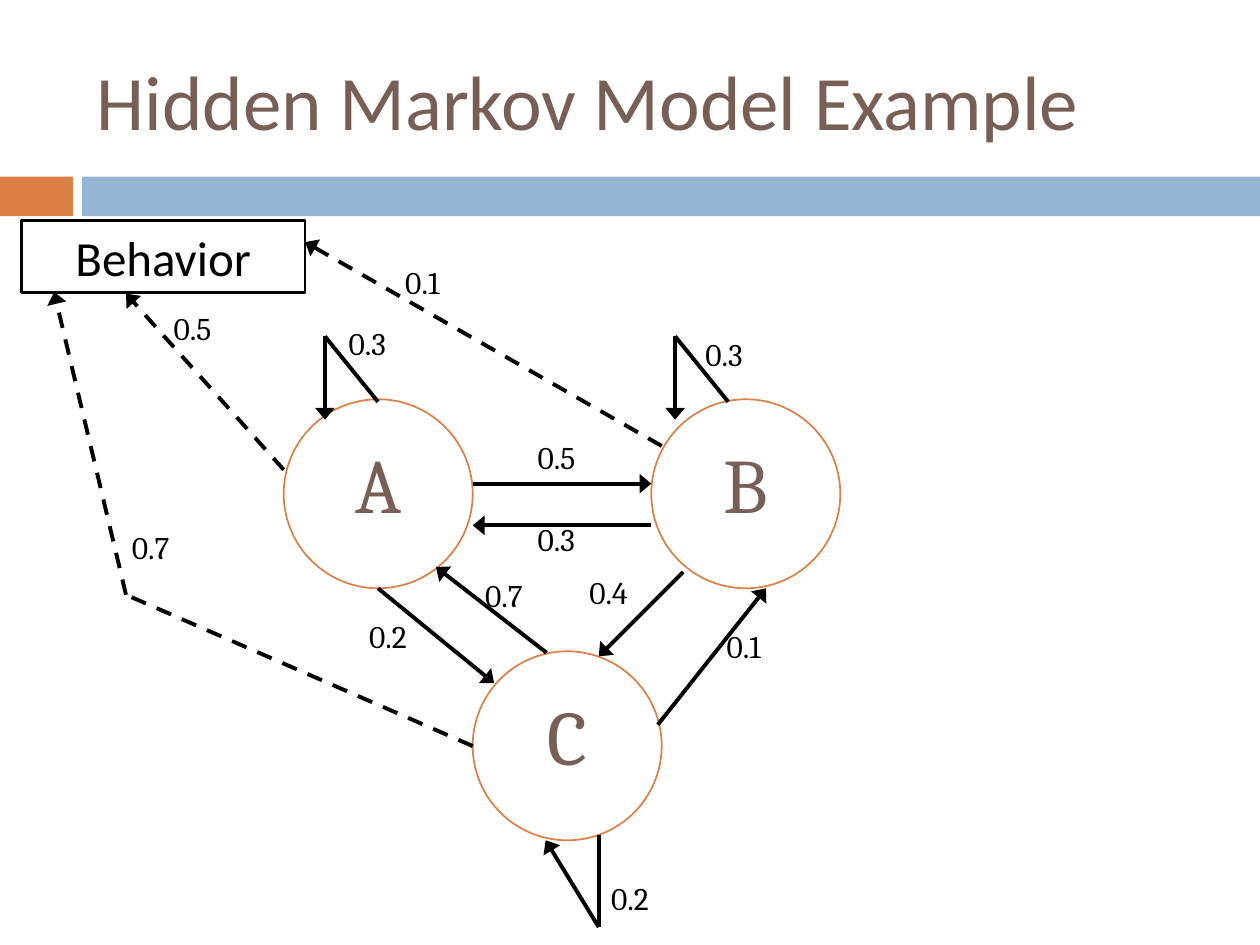
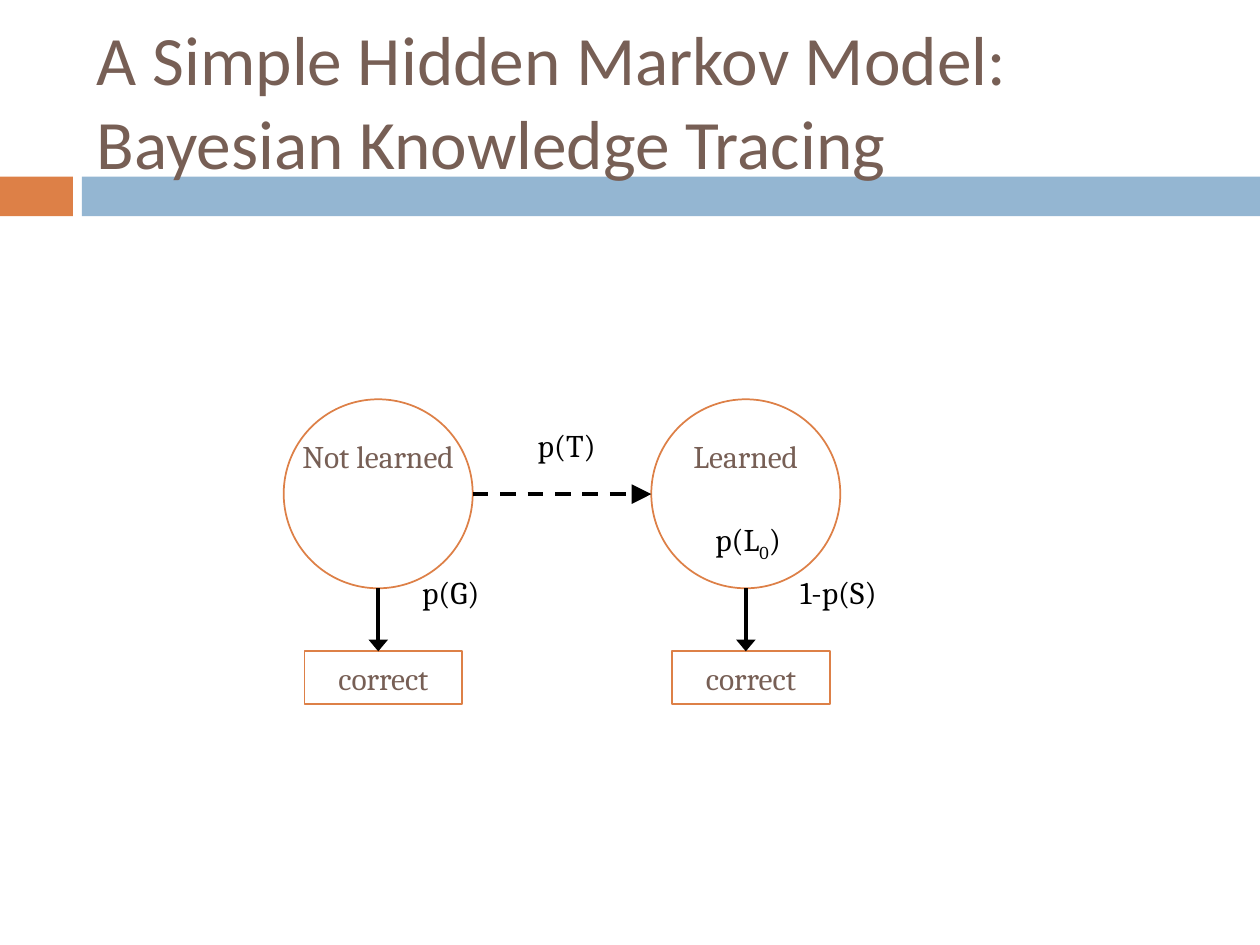
from copy import deepcopy
from dataclasses import dataclass
from itertools import pairwise

from pptx import Presentation
from pptx.dml.color import RGBColor
from pptx.enum.dml import MSO_LINE
from pptx.enum.shapes import MSO_CONNECTOR, MSO_SHAPE
from pptx.enum.text import MSO_ANCHOR, MSO_AUTO_SIZE, PP_ALIGN
from pptx.oxml.ns import qn
from pptx.oxml.xmlchemy import OxmlElement
from pptx.util import Cm, Pt

Point = tuple[float, float]


@dataclass(frozen=True)
class Theme:
    brown: str = "775F55"
    orange: str = "DD8047"
    blue: str = "94B6D2"
    black: str = "000000"
    white: str = "FFFFFF"
    heading: str = "Calibri"
    body: str = "Cambria"
    title_size: float = 44
    long_title_size: float = 39.6
    state_size: float = 44
    behavior_size: float = 28
    label_size: float = 18
    arrow_width: float = 2.25
    box_width: float = 1.5
    outline_width: float = 1


T = Theme()
DIAMETER = 3.81
LABEL_HEIGHT = 1.02


# All lengths in these records are centimetres
@dataclass(frozen=True)
class Label:
    text: str  # a part between underscores is a subscript
    left: float
    top: float
    width: float = 1.7


@dataclass(frozen=True)
class Edge:
    points: tuple[Point, ...]
    label: Label
    dashed: bool = False
    head_length: str = "med"


@dataclass(frozen=True)
class State:
    name: str
    left: float
    top: float
    size: float


@dataclass(frozen=True)
class Box:
    text: str
    left: float
    top: float
    width: float
    height: float


# Hidden Markov model: states A, B, C
STATES = (
    State("A", 5.72, 8.05, T.state_size),
    State("B", 13.13, 8.05, T.state_size),
    State("C", 9.53, 13.13, T.state_size),
)
BEHAVIOR = Box("Behavior", 0.43, 4.45, 5.72, 1.45)
TRANSITIONS = (
    Edge(((7.62, 11.86), (9.96, 13.77)), Label("0.2", 7.19, 12.32)),
    Edge(((13.77, 11.53), (12.07, 13.23)), Label("0.4", 11.63, 11.43)),
    Edge(((9.53, 9.75), (13.13, 9.75)), Label("0.5", 10.59, 8.71)),
    Edge(((13.13, 10.59), (9.53, 10.59)), Label("0.3", 10.59, 10.36)),
    Edge(((11.02, 13.16), (8.79, 11.43)), Label("0.7", 9.53, 11.48)),
    Edge(((13.26, 14.61), (15.44, 11.86)), Label("0.1", 14.4, 12.52)),
)
SELF_LOOPS = (
    Edge(((7.62, 8.1), (6.55, 6.78), (6.55, 8.46)), Label("0.3", 6.78, 6.4)),
    Edge(((14.68, 8.1), (13.61, 6.78), (13.61, 8.46)), Label("0.3", 13.97, 6.63)),
    Edge(((12.07, 16.84), (12.07, 18.69), (11, 16.94)), Label("0.2", 12.07, 17.6)),
)
EMISSIONS = (
    Edge(((5.72, 9.47), (2.54, 5.92)), Label("0.5", 3.25, 6.1), True),
    Edge(((13.34, 8.99), (6.15, 4.88)), Label("0.1", 7.92, 5.18), True),
    Edge(((9.53, 15.04), (2.54, 11.99), (1.09, 5.89)), Label("0.7", 2.41, 10.52), True),
)

# Bayesian Knowledge Tracing
KNOWLEDGE = (
    State("Not learned", 5.72, 8.05, T.label_size),
    State("Learned", 13.13, 8.05, T.label_size),
)
ANSWERS = tuple(Box("correct", s.left + 0.42, 13.13, 3.18, 1.07) for s in KNOWLEDGE)
ANSWER_LABELS = (Label("p(G)", 8.26, 11.43, 1.9), Label("1-p(S)", 15.88, 11.43, 2.97))
LEARNING = Edge(((9.53, 9.96), (13.13, 9.96)), Label("p(T)", 10.59, 8.46), True, "lg")
INITIAL = Label("p(L_0_)", 14.17, 10.36, 2.54)


def rgb(color: str) -> RGBColor:
    return RGBColor.from_string(color)


def style_run(r, size: float, font: str, color: str) -> None:
    r.font.size = Pt(size)
    r.font.name = font
    r.font.color.rgb = rgb(color)


def add_shape(slide, kind, left: float, top: float, width: float, height: float,
              fill: str | None = None, line: str | None = None,
              line_width: float = T.outline_width):
    sp = slide.shapes.add_shape(kind, Cm(left), Cm(top), Cm(width), Cm(height))
    sp.shadow.inherit = False
    if fill:
        sp.fill.solid()
        sp.fill.fore_color.rgb = rgb(fill)
    else:
        sp.fill.background()
    if line:
        sp.line.color.rgb = rgb(line)
        sp.line.width = Pt(line_width)
    else:
        sp.line.fill.background()
    return sp


def put_text(sp, text: str, size: float, font: str, color: str) -> None:
    tf = sp.text_frame
    tf.text = text
    tf.word_wrap = False
    p = tf.paragraphs[0]
    p.alignment = PP_ALIGN.CENTER
    style_run(p.runs[0], size, font, color)


def add_state(slide, state: State) -> None:
    sp = add_shape(slide, MSO_SHAPE.OVAL, state.left, state.top, DIAMETER, DIAMETER,
                   line=T.orange)
    put_text(sp, state.name, state.size, T.body, T.brown)
    sp.text_frame.vertical_anchor = MSO_ANCHOR.TOP
    sp.text_frame.margin_top = Cm(0.2)


def add_label(slide, label: Label) -> None:
    tf = slide.shapes.add_textbox(Cm(label.left), Cm(label.top), Cm(label.width),
                                  Cm(LABEL_HEIGHT)).text_frame
    tf.word_wrap = True
    for i, part in enumerate(label.text.split("_")):
        r = tf.paragraphs[0].add_run()
        r.text = part
        style_run(r, T.label_size, T.body, T.black)
        if i % 2:
            r.font._element.set("baseline", "-25000")


def add_edge(slide, edge: Edge) -> None:
    for start, end in pairwise(edge.points):
        line = slide.shapes.add_connector(MSO_CONNECTOR.STRAIGHT,
                                          *(Cm(v) for v in start + end))
        line.line.color.rgb = rgb(T.black)
        line.line.width = Pt(T.arrow_width)
        if edge.dashed:
            line.line.dash_style = MSO_LINE.DASH
        if end == edge.points[-1]:
            head = OxmlElement("a:tailEnd")
            for key, value in (("type", "triangle"), ("w", "lg"), ("len", edge.head_length)):
                head.set(key, value)
            line.line._get_or_add_ln().append(head)
        line.element.spPr.append(OxmlElement("a:effectLst"))
    add_label(slide, edge.label)


def add_bands(slide, layout) -> None:
    """Draw the two bands and move them to the layout, behind its placeholders."""
    bands = ((0, 1.47, T.orange), (1.65, 23.75, T.blue))
    for i, (left, width, color) in enumerate(bands):
        sp = add_shape(slide, MSO_SHAPE.RECTANGLE, left, 3.56, width, 0.8, fill=color)
        sp.element.nvSpPr.cNvPr.set("id", str(101 + i))
        layout.element.cSld.spTree.insert(2 + i, sp.element)


def add_slide(prs, layout, title: str, size: float):
    slide = prs.slides.add_slide(layout)
    sp = slide.shapes.title
    sp.left, sp.top, sp.width, sp.height = Cm(1.7), Cm(0.64), Cm(22.66), Cm(2.74)
    tf = sp.text_frame
    tf.text = title
    tf.word_wrap = True
    tf.auto_size = MSO_AUTO_SIZE.NONE
    tf.vertical_anchor = MSO_ANCHOR.MIDDLE
    p = tf.paragraphs[0]
    p.alignment = PP_ALIGN.LEFT
    for r in p.runs:
        style_run(r, size, T.heading, T.brown)
    # A line break takes the type size of the text around it
    for br in p._p.findall(qn("a:br")):
        br.append(deepcopy(p.runs[0].font._element))
    return slide


def build_markov(slide) -> None:
    for state in STATES:
        add_state(slide, state)
    b = BEHAVIOR
    sp = add_shape(slide, MSO_SHAPE.RECTANGLE, b.left, b.top, b.width, b.height,
                   T.white, T.black, T.box_width)
    put_text(sp, b.text, T.behavior_size, T.heading, T.black)
    for edge in TRANSITIONS + SELF_LOOPS + EMISSIONS:
        add_edge(slide, edge)


def build_tracing(slide) -> None:
    for state, box, label in zip(KNOWLEDGE, ANSWERS, ANSWER_LABELS):
        add_state(slide, state)
        sp = add_shape(slide, MSO_SHAPE.RECTANGLE, box.left, box.top, box.width,
                       box.height, line=T.orange)
        put_text(sp, box.text, T.label_size, T.body, T.brown)
        x = state.left + DIAMETER / 2
        add_edge(slide, Edge(((x, state.top + DIAMETER), (x, box.top)), label))
    add_edge(slide, LEARNING)
    add_label(slide, INITIAL)


def main() -> None:
    prs = Presentation()
    prs.slide_width, prs.slide_height = Cm(25.4), Cm(19.05)
    layout = prs.slide_layouts.get_by_name("Title Only")

    markov = add_slide(prs, layout, "Hidden Markov Model Example", T.title_size)
    add_bands(markov, layout)
    build_markov(markov)

    tracing = add_slide(prs, layout,
                        "A Simple Hidden Markov Model:\vBayesian Knowledge Tracing",
                        T.long_title_size)
    build_tracing(tracing)
    prs.save("out.pptx")


if __name__ == "__main__":
    main()
